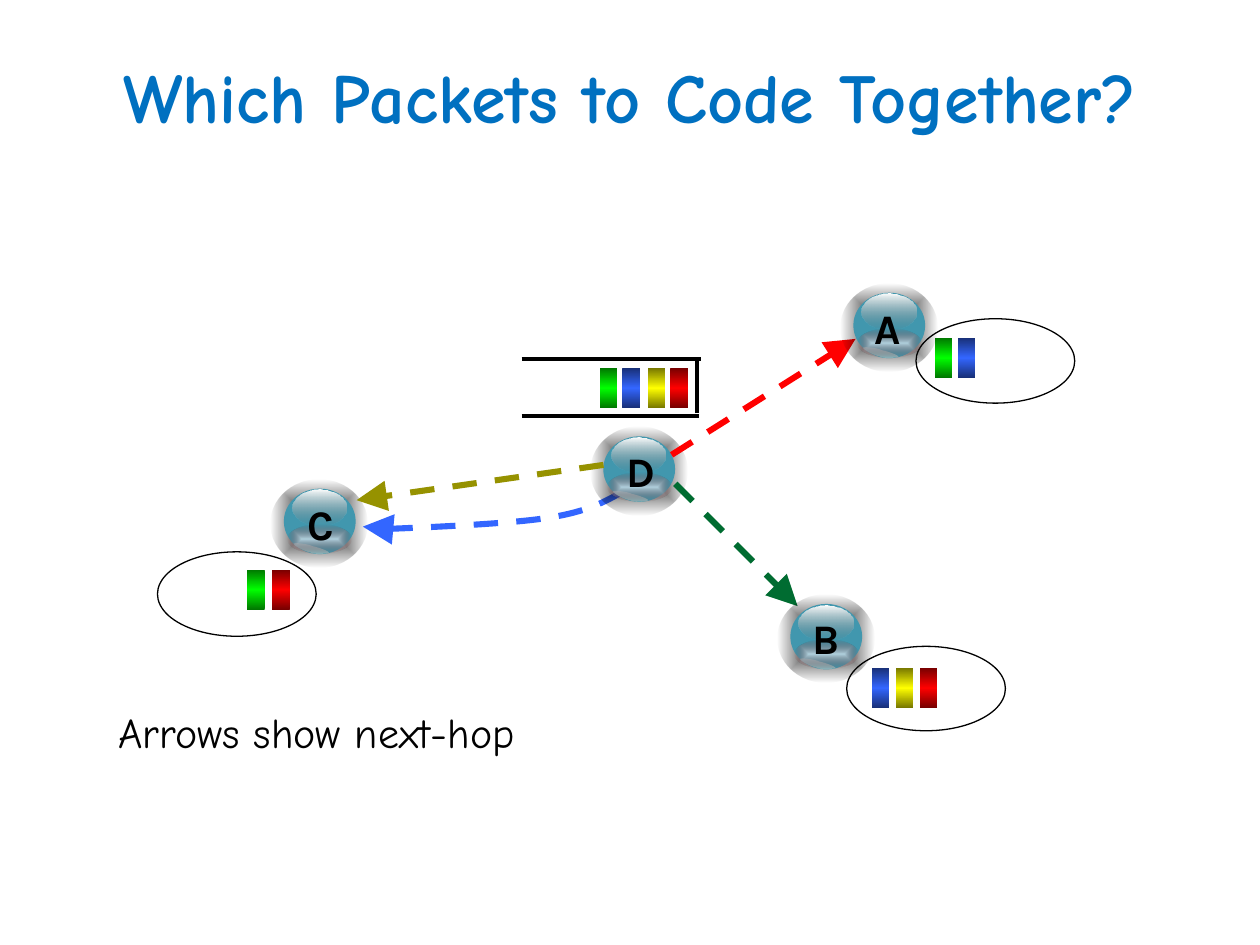
from dataclasses import dataclass

import lxml.etree
import pptx
import pptx.dml.color
import pptx.enum.dml
import pptx.enum.shapes
import pptx.enum.text
import pptx.oxml.ns
import pptx.util

COLUMNS, ROWS = 100, 75
SHAPE = pptx.enum.shapes.MSO_SHAPE
ALIGN = pptx.enum.text.PP_ALIGN
ANCHOR = pptx.enum.text.MSO_ANCHOR
qn = pptx.oxml.ns.qn


@dataclass(frozen=True)
class Theme:
    text_font: str = "Comic Neue"
    label_font: str = "Karla"
    title_size: float = 40
    body_size: float = 24
    arrow_width: float = 3.5
    queue_width: float = 2
    memory_width: float = 0.75
    title: str = "0070C0"
    ink: str = "000000"
    sphere: str = "4197AE"
    core: str = "4298AF"
    glint: str = "D2D0C6"
    to_a: str = "FF0000"
    to_b: str = "006C31"
    to_c_straight: str = "969200"
    to_c_curved: str = "3366FF"


# Gradient stops: position in percent, colour, opacity in percent
HALO = [(0, "000000", 100), (100, "000000", 0)]
GLOSS = [(0, "FFFFFF", 100), (100, "767676", 0)]
SHADE = [(0, "B1D2DF", 100), (100, "762C2C", 0)]
PACKETS = {
    "green": ("007600", "00FF00"),
    "blue": ("182F76", "3366FF"),
    "yellow": ("767600", "FFFF00"),
    "red": ("760000", "FF0000"),
}
# Glint outline around its own centre: start, then control, control, end
GLINT = [(-1.39, -0.13), (-1.4, -0.23), (-0.3, -0.31), (0.12, -0.17),
         (0.63, -0.15), (1.47, 0.02), (1.49, 0.12), (1.4, 0.23), (0.43, 0.49),
         (0.01, 0.35), (-0.5, 0.33), (-1.47, -0.02), (-1.39, -0.13)]


def rgb(code):
    return pptx.dml.color.RGBColor.from_string(code)


def add_opacity(colour, percent):
    lxml.etree.SubElement(colour, qn("a:alpha"), val=str(percent * 1000))


def fill_solid(shape, code):
    shape.fill.solid()
    shape.fill.fore_color.rgb = rgb(code)


def fill_gradient(shape, stops, radial=False):
    shape.fill.background()
    properties = shape.element.spPr
    gradient = lxml.etree.Element(qn("a:gradFill"), rotWithShape="1")
    stop_list = lxml.etree.SubElement(gradient, qn("a:gsLst"))
    for position, code, opacity in stops:
        stop = lxml.etree.SubElement(stop_list, qn("a:gs"), pos=str(position * 1000))
        colour = lxml.etree.SubElement(stop, qn("a:srgbClr"), val=code)
        if opacity < 100:
            add_opacity(colour, opacity)
    if radial:
        direction = lxml.etree.SubElement(gradient, qn("a:path"), path="shape")
        middle = dict.fromkeys("ltrb", "50000")
        lxml.etree.SubElement(direction, qn("a:fillToRect"), **middle)
    else:
        lxml.etree.SubElement(gradient, qn("a:lin"), ang="5400000", scaled="1")
    properties.replace(properties.find(qn("a:noFill")), gradient)


class Board:
    """A slide with a fixed grid and one style."""

    def __init__(self, deck, theme):
        self.theme = theme
        self.slide = deck.slides.add_slide(deck.slide_layouts[6])
        self.column = deck.slide_width / COLUMNS
        self.row = deck.slide_height / ROWS

    def place(self, *lengths):
        """Turn alternating columns and rows into slide lengths."""
        return [round(n * (self.row if i % 2 else self.column))
                for i, n in enumerate(lengths)]

    def group(self):
        return self.slide.shapes.add_group_shape().shapes

    def text(self, box, words, size, colour, font=None, bold=False,
             align=ALIGN.LEFT, anchor=ANCHOR.TOP, grow=False, hanging=0):
        frame = self.slide.shapes.add_textbox(*self.place(*box)).text_frame
        frame.word_wrap = not grow
        if grow:
            frame.auto_size = pptx.enum.text.MSO_AUTO_SIZE.SHAPE_TO_FIT_TEXT
        frame.vertical_anchor = anchor
        frame.text = words
        paragraph = frame.paragraphs[0]
        paragraph.alignment = align
        if hanging:
            indent = self.place(hanging)[0]
            properties = paragraph._p.get_or_add_pPr()
            properties.set("marL", str(indent))
            properties.set("indent", str(-indent))
        style = paragraph.runs[0].font
        style.name = font or self.theme.text_font
        style.size = pptx.util.Pt(size)
        style.bold = bold
        style.color.rgb = rgb(colour)

    def shape(self, kind, box, parent=None):
        item = (parent or self.slide.shapes).add_shape(kind, *self.place(*box))
        item.shadow.inherit = False
        item.line.fill.background()
        return item

    def curve(self, points, closed, parent=None):
        """Draw cubic Bézier curves: a start, then two controls and an end each."""
        start, *rest = [self.place(*point) for point in points]
        builder = (parent or self.slide.shapes).build_freeform(*start)
        builder.add_line_segments(rest, close=closed)
        item = builder.convert_to_shape()
        item.shadow.inherit = False
        segments = list(item.element.iter(qn("a:lnTo")))
        for first in range(0, len(rest), 3):
            bend = lxml.etree.Element(qn("a:cubicBezTo"))
            segments[first].addprevious(bend)
            for segment in segments[first:first + 3]:
                bend.append(segment[0])
                segment.getparent().remove(segment)
        return item

    def stroke(self, line, colour, width, arrow=False):
        line.color.rgb = rgb(colour)
        line.width = pptx.util.Pt(width)
        if arrow:
            line.dash_style = pptx.enum.dml.MSO_LINE.DASH
            lxml.etree.SubElement(line._get_or_add_ln(), qn("a:tailEnd"),
                                  type="triangle", w="lg", len="lg")

    def line(self, ends, colour, width, arrow=False, parent=None):
        item = (parent or self.slide.shapes).add_connector(
            pptx.enum.shapes.MSO_CONNECTOR.STRAIGHT, *self.place(*ends))
        self.stroke(item.line, colour, width, arrow)
        lxml.etree.SubElement(item.element.spPr, qn("a:effectLst"))

    def curved_arrow(self, points, colour):
        route = self.curve(points, closed=False)
        route.fill.background()
        self.stroke(route.line, colour, self.theme.arrow_width, arrow=True)

    def node(self, left, top):
        """Draw a glossy sphere in a soft halo."""
        parts = self.group()

        def disc(dx, dy, width, height):
            return self.shape(SHAPE.OVAL, (left + dx, top + dy, width, height), parts)

        fill_gradient(disc(0, 0, 7.7, 7), HALO, radial=True)
        fill_solid(disc(1.03, 0.73, 5.7, 5.2), self.theme.sphere)
        fill_solid(disc(3.7, 3.35, 0.7, 0.6), self.theme.core)
        fill_solid(disc(3.7, 3.4, 0.6, 0.5), self.theme.core)
        fill_gradient(disc(1.7, 0.83, 4.3, 2.8), GLOSS)
        glint = self.curve([(left + 3.15 + x, top + 5.45 + y) for x, y in GLINT],
                           closed=True, parent=parts)
        glint.rotation = 9.1
        glint.line.fill.background()
        fill_solid(glint, self.theme.glint)
        add_opacity(glint.element.spPr.find(".//" + qn("a:srgbClr")), 50)
        fill_gradient(disc(1.33, 3.6, 5.1, 2.3), SHADE, radial=True)

    def label(self, name, left, top, width):
        self.text((left, top, width, 5), name, self.theme.body_size, self.theme.ink,
                  font=self.theme.label_font, bold=True, grow=True)

    def memory(self, left, top):
        oval = self.shape(SHAPE.OVAL, (left, top, 12.6, 6.7))
        oval.fill.background()
        self.stroke(oval.line, self.theme.ink, self.theme.memory_width)

    def packets(self, top, **lefts):
        for name, left in lefts.items():
            packet = self.shape(SHAPE.RECTANGLE, (left, top, 1.4, 3.2))
            dark, bright = PACKETS[name]
            fill_gradient(packet, [(0, dark, 100), (50, bright, 100), (100, dark, 100)])


def main():
    deck = pptx.Presentation()
    deck.slide_width, deck.slide_height = pptx.util.Inches(10), pptx.util.Inches(7.5)
    theme = Theme()
    board = Board(deck, theme)

    board.node(21.5, 38.05)
    board.curved_arrow([(49.3, 39.1), (48, 39.8), (46.7, 40.6), (43.5, 41.1),
                        (40.4, 41.6), (32.7, 41.9), (30.3, 42),
                        (27.8, 42.2), (29, 41.9), (28.8, 41.8)], theme.to_c_curved)
    board.text((2.5, 3.3, 95, 8.5), "Which Packets to Code Together?", theme.title_size,
               theme.title, bold=True, align=ALIGN.CENTER, anchor=ANCHOR.MIDDLE)
    board.text((8.4, 55.6, 90, 9.9), "Arrows show next-hop", theme.body_size, theme.ink,
               hanging=3.8)

    queue = board.group()
    for side in ((41.4, 28.5, 55.6, 28.5), (41.4, 33, 55.5, 33), (55.3, 32.8, 55.3, 28.6)):
        board.line(side, theme.ink, theme.queue_width, parent=queue)
    for corner in ((72.7, 25.3), (67.2, 51.3), (12.5, 43.8)):
        board.memory(*corner)
    board.packets(29.2, green=47.6, blue=49.4, yellow=51.4, red=53.2)
    board.packets(53, blue=69.2, yellow=71.1, red=73)
    board.packets(26.8, green=74.2, blue=76)
    board.packets(45.2, green=19.6, red=21.6)

    board.node(46.85, 33.9)
    board.label("C", 23.4, 39.1, 4)
    board.label("D", 48.7, 34.9, 4.2)
    for ends, colour in (((47.9, 36.9, 28.3, 39.7), theme.to_c_straight),
                         ((53.6, 38.4, 63.3, 48.1), theme.to_b),
                         ((53.3, 36.1, 67.9, 26.9), theme.to_a)):
        board.line(ends, colour, theme.arrow_width, arrow=True)
    board.node(66.7, 22.5)
    board.label("A", 68.4, 23.5, 4.4)
    board.node(61.7, 47.2)
    board.label("B", 63.5, 48.1, 4.4)
    deck.save("out.pptx")


if __name__ == "__main__":
    main()
